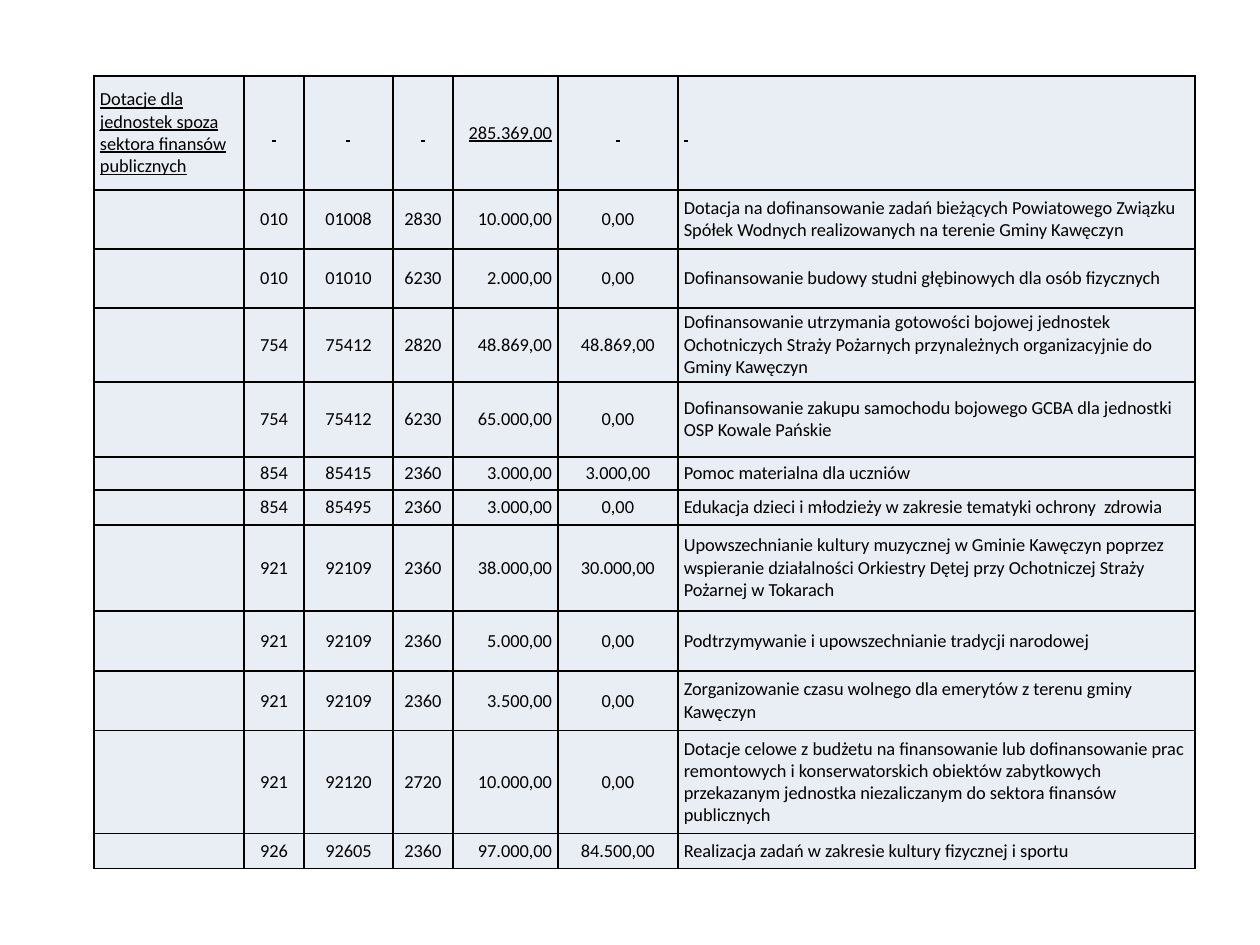
from lxml.etree import SubElement
from pptx import Presentation
from pptx.dml.color import RGBColor
from pptx.enum.text import MSO_ANCHOR, PP_ALIGN
from pptx.oxml.ns import qn
from pptx.util import Emu, Pt

PX_PER_INCH = 126
INK, CELL_FILL = "000000", "E9EDF4"
FONT_SIZE = 10.5
UNDERLINED_GAP = chr(160)

COLUMN_WIDTHS = [150, 60, 89, 60, 105, 120, 517]
LEFT, CENTER, RIGHT = PP_ALIGN.LEFT, PP_ALIGN.CENTER, PP_ALIGN.RIGHT
COLUMN_ALIGNS = [LEFT, CENTER, CENTER, CENTER, RIGHT, CENTER, LEFT]

TOTAL = ["Dotacje dla jednostek spoza sektora finansów publicznych",
         UNDERLINED_GAP, UNDERLINED_GAP, UNDERLINED_GAP, "285.369,00",
         UNDERLINED_GAP, UNDERLINED_GAP]
TOTAL_HEIGHT = 114

# Row height, division, chapter, paragraph, plan, spent, purpose
GRANTS = [
    (59, "010", "01008", "2830", "10.000,00", "0,00",
     "Dotacja na dofinansowanie zadań bieżących Powiatowego Związku "
     "Spółek Wodnych realizowanych na terenie Gminy Kawęczyn"),
    (59, "010", "01010", "6230", "2.000,00", "0,00",
     "Dofinansowanie budowy studni głębinowych dla osób fizycznych"),
    (74, "754", "75412", "2820", "48.869,00", "48.869,00",
     "Dofinansowanie utrzymania gotowości bojowej jednostek Ochotniczych "
     "Straży Pożarnych przynależnych organizacyjnie do Gminy Kawęczyn"),
    (75, "754", "75412", "6230", "65.000,00", "0,00",
     "Dofinansowanie zakupu samochodu bojowego GCBA dla jednostki "
     "OSP Kowale Pańskie"),
    (33, "854", "85415", "2360", "3.000,00", "3.000,00",
     "Pomoc materialna dla uczniów"),
    (35, "854", "85495", "2360", "3.000,00", "0,00",
     "Edukacja dzieci i młodzieży w zakresie tematyki ochrony  zdrowia"),
    (86, "921", "92109", "2360", "38.000,00", "30.000,00",
     "Upowszechnianie kultury muzycznej w Gminie Kawęczyn poprzez wspieranie "
     "działalności Orkiestry Dętej przy Ochotniczej Straży Pożarnej w Tokarach"),
    (60, "921", "92109", "2360", "5.000,00", "0,00",
     "Podtrzymywanie i upowszechnianie tradycji narodowej"),
    (60, "921", "92109", "2360", "3.500,00", "0,00",
     "Zorganizowanie czasu wolnego dla emerytów z terenu gminy Kawęczyn"),
    (103, "921", "92120", "2720", "10.000,00", "0,00",
     "Dotacje celowe z budżetu na finansowanie lub dofinansowanie prac "
     "remontowych i konserwatorskich obiektów zabytkowych przekazanym "
     "jednostka niezaliczanym do sektora finansów publicznych"),
    (35, "926", "92605", "2360", "97.000,00", "84.500,00",
     "Realizacja zadań w zakresie kultury fizycznej i sportu"),
]


def px(length):
    return Emu(round(length * 914400 / PX_PER_INCH))


def color(hex_string):
    return RGBColor.from_string(hex_string)


def write(cell, text, align=LEFT, underline=False, size=FONT_SIZE, ink=INK):
    cell.vertical_anchor = MSO_ANCHOR.MIDDLE
    cell.margin_left = cell.margin_right = px(6)
    cell.margin_top = cell.margin_bottom = 0
    paragraph = cell.text_frame.paragraphs[0]
    paragraph.alignment = align
    if not text:
        # The end mark sets the line height of an empty cell
        SubElement(paragraph._p, qn("a:endParaRPr"), sz=str(int(size * 100)))
        return
    run = paragraph.add_run()
    run.text = text
    run.font.name = "Calibri"
    run.font.size = Pt(size)
    run.font.bold = False
    run.font.underline = underline
    run.font.color.rgb = color(ink)


def paint(cell, fill=CELL_FILL, border=INK):
    """Fill the cell and rule all four of its edges."""
    cell.fill.solid()
    cell.fill.fore_color.rgb = color(fill)
    properties = cell._tc.get_or_add_tcPr()
    for position, edge in enumerate(("lnL", "lnR", "lnT", "lnB")):
        line = SubElement(properties, qn(f"a:{edge}"), w=str(Pt(1)))
        solid = SubElement(line, qn("a:solidFill"))
        SubElement(solid, qn("a:srgbClr"), val=border)
        properties.insert(position, line)


def add_grants_table(slide, left, top):
    heights = [TOTAL_HEIGHT] + [grant[0] for grant in GRANTS]
    rows = [TOTAL] + [["", *grant[1:]] for grant in GRANTS]
    table = slide.shapes.add_table(
        len(rows), len(COLUMN_WIDTHS), px(left), px(top),
        px(sum(COLUMN_WIDTHS)), px(sum(heights))).table
    table.first_row = table.horz_banding = False
    for column, width in zip(table.columns, COLUMN_WIDTHS):
        column.width = px(width)
    for row, height, texts in zip(table.rows, heights, rows):
        row.height = px(height)
        for cell, text, align in zip(row.cells, texts, COLUMN_ALIGNS):
            write(cell, text, align=align, underline=texts is TOTAL)
            paint(cell)


def main():
    presentation = Presentation()
    presentation.slide_width, presentation.slide_height = px(1260), px(945)
    slide = presentation.slides.add_slide(presentation.slide_layouts[6])
    add_grants_table(slide, left=94, top=76)
    presentation.save("out.pptx")


if __name__ == "__main__":
    main()
